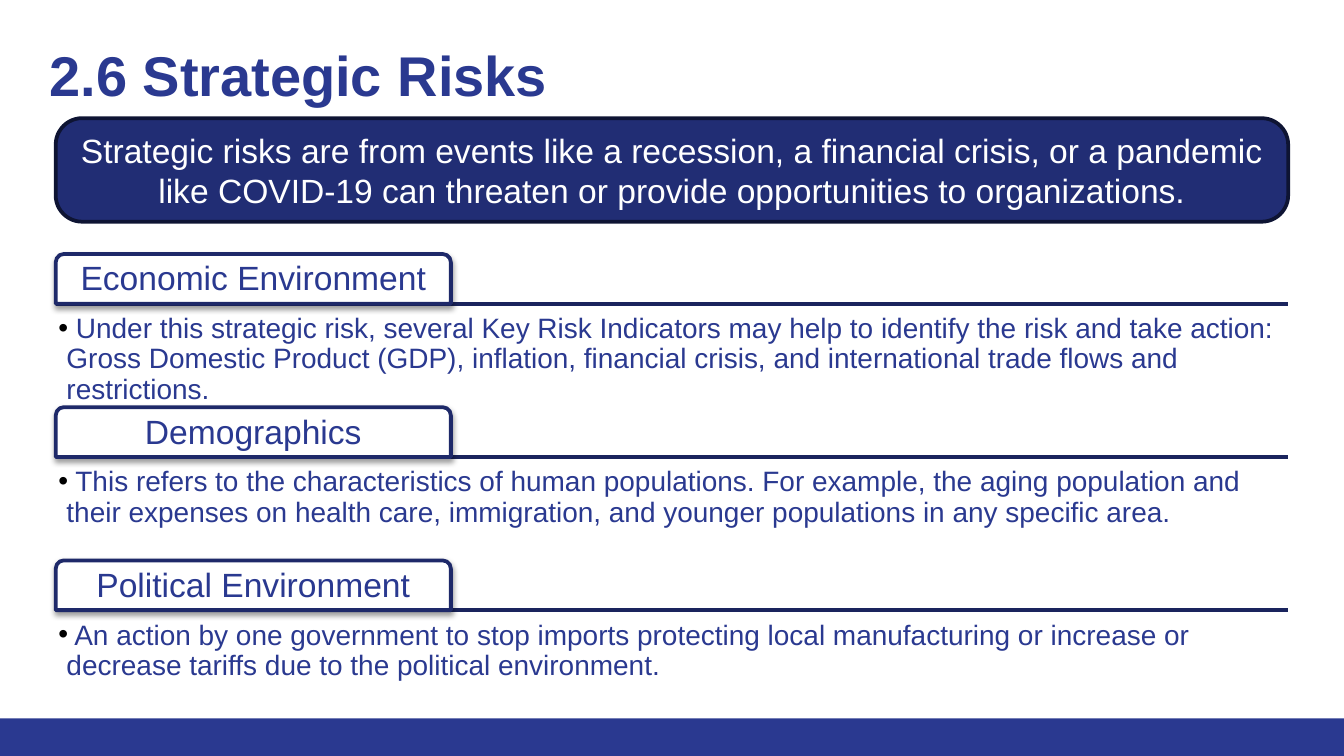
from lxml.etree import SubElement
from pptx import Presentation
from pptx.dml.color import RGBColor
from pptx.enum.shapes import MSO_CONNECTOR, MSO_SHAPE
from pptx.enum.text import MSO_ANCHOR, PP_ALIGN
from pptx.oxml.ns import qn
from pptx.util import Inches, Pt

TITLE = "2.6 Strategic Risks"
SUMMARY = (
    "Strategic risks are from events like a recession, a financial crisis, or a pandemic "
    "like COVID-19 can threaten or provide opportunities to organizations."
)
RISKS = [
    ("Economic Environment",
     " Under this strategic risk, several Key Risk Indicators may help to identify the risk "
     "and take action: Gross Domestic Product (GDP), inflation, financial crisis, and "
     "international trade flows and restrictions."),
    ("Demographics",
     " This refers to the characteristics of human populations. For example, the aging "
     "population and their expenses on health care, immigration, and younger populations "
     "in any specific area."),
    ("Political Environment",
     " An action by one government to stop imports protecting local manufacturing or "
     "increase or decrease tariffs due to the political environment."),
]

FONT = "Arial"
BLUE = RGBColor(0x2A, 0x39, 0x90)
BANNER_FILL = RGBColor(0x21, 0x2D, 0x74)
BANNER_LINE = RGBColor(0x0E, 0x14, 0x33)
RULE_LINE = RGBColor(0x1A, 0x24, 0x5D)
TAB_LINE = RGBColor(0x1E, 0x29, 0x69)
WHITE = RGBColor(0xFF, 0xFF, 0xFF)

SLIDE_WIDTH = 10
SLIDE_HEIGHT = SLIDE_WIDTH * 9 / 16
FOOTER_HEIGHT = 0.28
WIDTH = 9.17
LEFT = (SLIDE_WIDTH - WIDTH) / 2
FIRST_TAB_TOP, RISK_PITCH = 1.89, 1.14
TAB_WIDTH, TAB_HEIGHT = 2.94, 0.37
BODY_GAP, BODY_HEIGHT = 0.06, 0.75


def write(shape, text, size, color, margins, align=PP_ALIGN.LEFT,
          anchor=MSO_ANCHOR.TOP, bold=False):
    """Fill a shape with one paragraph and return that paragraph."""
    frame = shape.text_frame
    frame.text = text
    frame.word_wrap = True
    frame.vertical_anchor = anchor
    (frame.margin_left, frame.margin_top,
     frame.margin_right, frame.margin_bottom) = map(Inches, margins)
    paragraph = frame.paragraphs[0]
    paragraph.alignment = align
    font = paragraph.runs[0].font
    font.name, font.size, font.bold = FONT, Pt(size), bold
    font.color.rgb = color
    return paragraph


def add_box(slide, kind, left, top, width, height, fill, line=None):
    shape = slide.shapes.add_shape(
        kind, Inches(left), Inches(top), Inches(width), Inches(height))
    shape.shadow.inherit = False
    shape.fill.solid()
    shape.fill.fore_color.rgb = fill
    if line is None:
        shape.line.fill.background()
    else:
        shape.line.color.rgb = line
        shape.line.width = Pt(2)
    return shape


def add_text_box(slide, left, top, width, height):
    return slide.shapes.add_textbox(
        Inches(left), Inches(top), Inches(width), Inches(height))


def add_rule(slide, y):
    rule = slide.shapes.add_connector(
        MSO_CONNECTOR.STRAIGHT, Inches(LEFT), Inches(y), Inches(LEFT + WIDTH), Inches(y))
    rule.line.color.rgb = RULE_LINE
    rule.line.width = Pt(2)
    SubElement(rule._element.spPr, qn("a:effectLst"))


def add_drop_shadow(shape):
    effects = shape._element.spPr.find(qn("a:effectLst"))
    shadow = SubElement(effects, qn("a:outerShdw"), blurRad=str(Pt(3.1)),
                        dist=str(Pt(1.6)), dir="5400000", rotWithShape="0")
    color = SubElement(shadow, qn("a:srgbClr"), val="000000")
    SubElement(color, qn("a:alpha"), val="38000")


def add_bullet(paragraph):
    properties = paragraph._p.get_or_add_pPr()
    properties.set("marL", str(Inches(0.06)))
    properties.set("indent", str(Inches(-0.06)))
    properties.set("lvl", "1")
    bullet_color = SubElement(properties, qn("a:buClr"))
    SubElement(bullet_color, qn("a:srgbClr"), val="000000")
    SubElement(properties, qn("a:buFont"), typeface=FONT)
    SubElement(properties, qn("a:buChar"), char="•")


def add_risk(slide, top, heading, description):
    rule_y = top + TAB_HEIGHT
    add_rule(slide, rule_y)

    tab = add_box(slide, MSO_SHAPE.ROUND_2_SAME_RECTANGLE,
                  LEFT, top, TAB_WIDTH, TAB_HEIGHT, WHITE, TAB_LINE)
    add_drop_shadow(tab)
    paragraph = write(tab, heading, 18, BLUE, (0.05, 0.03, 0.05, 0.03),
                      PP_ALIGN.CENTER, MSO_ANCHOR.MIDDLE)
    paragraph.line_spacing = 0.9

    body = add_text_box(slide, LEFT, rule_y + BODY_GAP, WIDTH, BODY_HEIGHT)
    paragraph = write(body, description, 15, BLUE, (0.02,) * 4)
    add_bullet(paragraph)
    paragraph.line_spacing = 0.9


def main():
    presentation = Presentation()
    presentation.slide_width = Inches(SLIDE_WIDTH)
    presentation.slide_height = Inches(SLIDE_HEIGHT)
    slide = presentation.slides.add_slide(presentation.slide_layouts[6])

    add_box(slide, MSO_SHAPE.RECTANGLE, 0, SLIDE_HEIGHT - FOOTER_HEIGHT,
            SLIDE_WIDTH, FOOTER_HEIGHT, BLUE)
    title = add_text_box(slide, 0.27, 0.2, 9.2, 0.89)
    write(title, TITLE, 30, BLUE, (0.1,) * 4, bold=True)

    banner = add_box(slide, MSO_SHAPE.ROUNDED_RECTANGLE,
                     LEFT, 0.88, WIDTH, 0.77, BANNER_FILL, BANNER_LINE)
    banner.adjustments[0] = 0.255
    write(banner, SUMMARY, 18, WHITE, (0.1, 0.05, 0.1, 0.05),
          PP_ALIGN.CENTER, MSO_ANCHOR.MIDDLE)

    for index, (heading, description) in enumerate(RISKS):
        add_risk(slide, FIRST_TAB_TOP + index * RISK_PITCH, heading, description)

    presentation.save("out.pptx")


if __name__ == "__main__":
    main()
